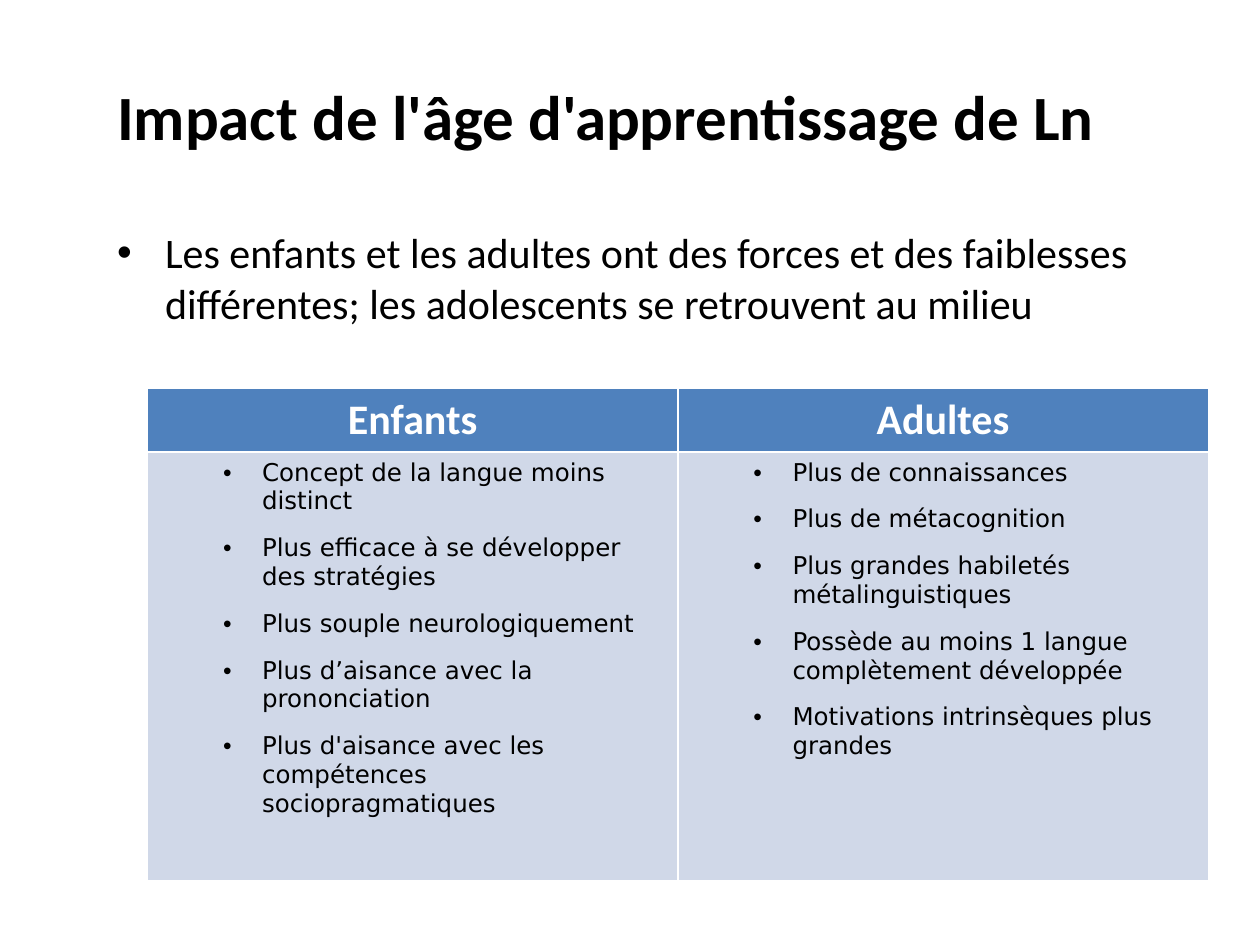
from dataclasses import dataclass

from lxml import etree
from pptx import Presentation
from pptx.dml.color import RGBColor
from pptx.enum.text import MSO_ANCHOR, MSO_AUTO_SIZE, PP_ALIGN
from pptx.oxml.ns import qn
from pptx.util import Inches, Pt

LEFT, CENTER = PP_ALIGN.LEFT, PP_ALIGN.CENTER
TOP, MIDDLE = MSO_ANCHOR.TOP, MSO_ANCHOR.MIDDLE
NO_FIT = MSO_AUTO_SIZE.NONE


@dataclass(frozen=True)
class Theme:
    text: RGBColor = RGBColor(0, 0, 0)
    light: RGBColor = RGBColor(255, 255, 255)
    header: RGBColor = RGBColor.from_string("4F81BD")
    cell: RGBColor = RGBColor.from_string("D0D8E8")
    font: str = "Calibri"
    cell_font: str = "DejaVu Sans"
    title_size: Pt = Pt(36)
    body_size: Pt = Pt(24)
    cell_size: Pt = Pt(14)


class SlideBuilder:
    def __init__(self, slide, theme):
        self.slide = slide
        self.theme = theme

    def add_text(self, p, text, color, **formats):
        r = p.add_run()
        r.text = text
        for name, value in formats.items():
            setattr(r.font, name, value)
        r.font.color.rgb = color

    def bullet(self, p, indent, hanging):
        pPr = p._p.get_or_add_pPr()
        pPr.set("marL", str(Inches(indent)))
        pPr.set("indent", str(-Inches(hanging)))
        font = etree.SubElement(pPr, qn("a:buFont"))
        font.set("typeface", "Arial")
        etree.SubElement(pPr, qn("a:buChar")).set("char", "•")

    def place(self, sp, box, anchor):
        sp.left, sp.top, sp.width, sp.height = map(Inches, box)
        tf = sp.text_frame
        formats = {"word_wrap": True, "auto_size": NO_FIT, "vertical_anchor": anchor}
        for name, value in formats.items():
            setattr(tf, name, value)
        return tf.paragraphs[0]

    def title(self, text, box):
        p = self.place(self.slide.shapes.title, box, MIDDLE)
        p.alignment = LEFT
        t = self.theme
        self.add_text(p, text, t.text, name=t.font, size=t.title_size, bold=True)

    def body(self, text, box):
        p = self.place(self.slide.placeholders[1], box, TOP)
        self.bullet(p, 0.38, 0.38)
        p.space_before = Pt(0)
        t = self.theme
        self.add_text(p, text, t.text, name=t.font, size=t.body_size)

    def header_cell(self, cell, text):
        t = self.theme
        cell.fill.solid()
        cell.fill.fore_color.rgb = t.header
        p = cell.text_frame.paragraphs[0]
        p.alignment = CENTER
        self.add_text(p, text, t.light, name=t.font, size=t.body_size, bold=True)

    def list_cell(self, cell, items):
        t = self.theme
        cell.fill.solid()
        cell.fill.fore_color.rgb = t.cell
        tf = cell.text_frame
        for i, item in enumerate(items):
            p = tf.add_paragraph() if i else tf.paragraphs[0]
            p.level = 1
            self.bullet(p, 0.81, 0.31)
            p.space_before = Pt(10.3 if i else 0)
            self.add_text(p, item, t.text, name=t.cell_font, size=t.cell_size, bold=False)

    def table(self, columns, box, row_heights):
        frame = self.slide.shapes.add_table(len(row_heights), len(columns), *map(Inches, box))
        table = frame.table
        for row, height in zip(table.rows, row_heights):
            row.height = Inches(height)
        for i, (heading, items) in enumerate(columns.items()):
            table.columns[i].width = Inches(box[2] / len(columns))
            self.header_cell(table.cell(0, i), heading)
            self.list_cell(table.cell(1, i), items)


STRENGTHS = {
    "Enfants": [
        "Concept de la langue moins distinct",
        "Plus efficace à se développer des stratégies",
        "Plus souple neurologiquement",
        "Plus d’aisance avec la prononciation",
        "Plus d'aisance avec les compétences sociopragmatiques",
    ],
    "Adultes": [
        "Plus de connaissances",
        "Plus de métacognition",
        "Plus grandes habiletés métalinguistiques",
        "Possède au moins 1 langue complètement développée",
        "Motivations intrinsèques plus grandes",
    ],
}


def main():
    prs = Presentation()
    prs.slide_width, prs.slide_height = Inches(10), Inches(7.5)
    s = SlideBuilder(prs.slides.add_slide(prs.slide_layouts[1]), Theme())
    s.title("Impact de l'âge d'apprentissage de Ln", (0.83, 0.29, 8.83, 1.25))
    s.body(
        "Les enfants et les adultes ont des forces et des faiblesses différentes; "
        "les adolescents se retrouvent au milieu",
        (0.83, 1.75, 8.83, 1),
    )
    s.table(STRENGTHS, (1.17, 3.08, 8.42, 3.9), (0.5, 3.4))
    prs.save("out.pptx")


if __name__ == "__main__":
    main()
